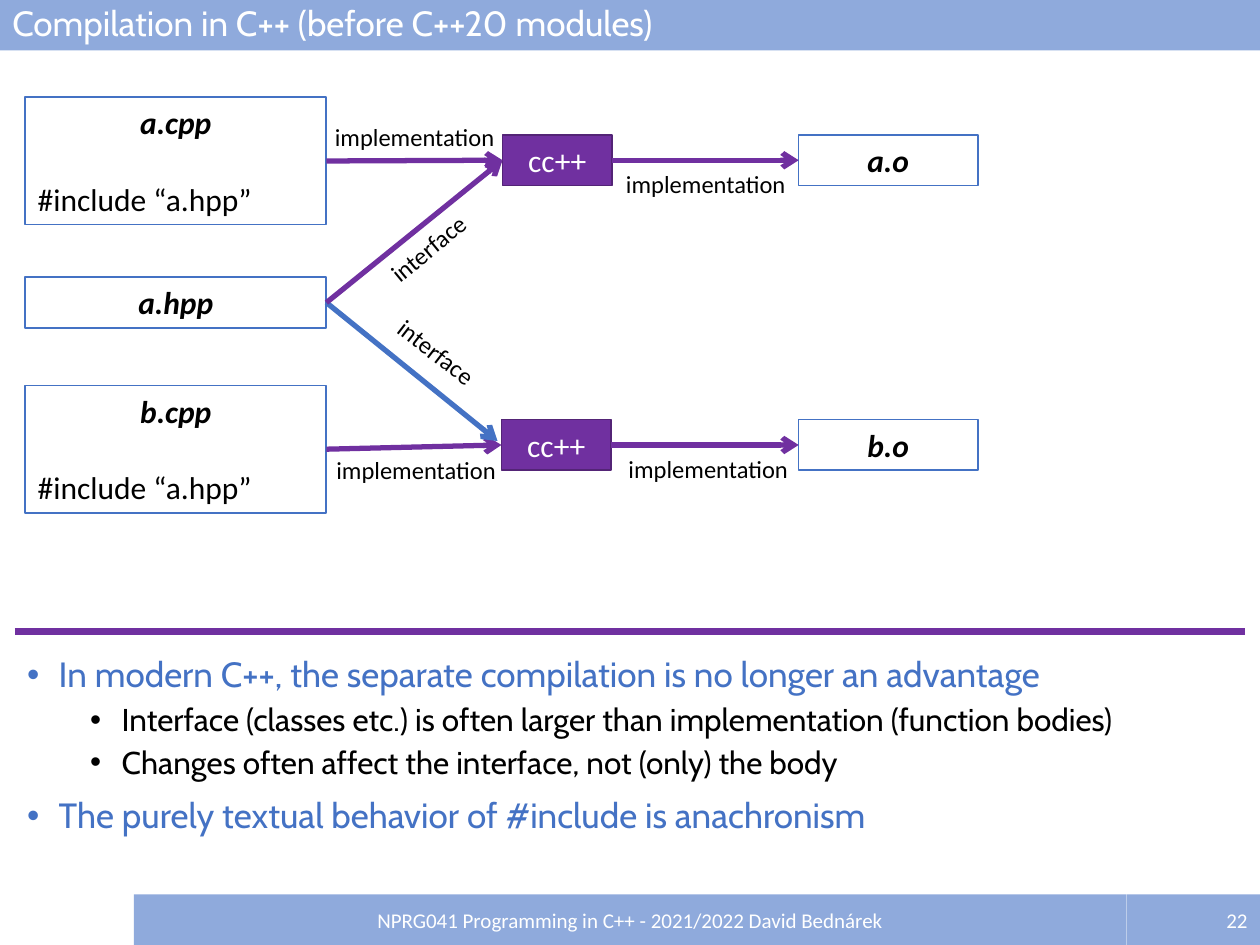
from pptx import Presentation, util as u
from pptx.dml.color import RGBColor
from pptx.enum import shapes, text
from pptx.oxml.ns import qn
from lxml import etree

Cm, Pt = u.Cm, u.Pt
LEFT, CENTER, RIGHT = text.PP_ALIGN.LEFT, text.PP_ALIGN.CENTER, text.PP_ALIGN.RIGHT
TOP, MIDDLE = text.MSO_ANCHOR.TOP, text.MSO_ANCHOR.MIDDLE


class Theme:
    bar, blue, purple, edge = "8FAADC", "4472C4", "7030A0", "532476"
    white, black = "FFFFFF", "000000"
    head, body = "Cabin", "Calibri"
    big, mid, label, small = 20, 18, 14, 12


# Content
TITLE = "Compilation in C++ (before C++20 modules)"
FOOTER = "NPRG041 Programming in C++ - 2021/2022 David Bednárek"
PAGE = "22"
INCLUDE = "#include “a.hpp”"
BULLETS = [
    (0, "In modern C++, the separate compilation is no longer an advantage"),
    (1, "Interface (classes etc.) is often larger than implementation (function bodies)"),
    (1, "Changes often affect the interface, not (only) the body"),
    (0, "The purely textual behavior of #include is anachronism"),
]
# Each pipeline: name, source top, compiler left, compiler and object top
PIPELINES = [("a", 1.96, 10.13, 2.72), ("b", 7.77, 10.11, 8.46)]
# Each label: text, left, top, rotation
LABELS = [
    ("interface", 7.49, 4.57, 320.5),
    ("implementation", 6.5, 2.34, 0),
    ("interface", 7.65, 6.68, 37.8),
    ("implementation", 6.53, 9.04, 0),
    ("implementation", 12.42, 9.02, 0),
    ("implementation", 12.37, 3.28, 0),
]
LABEL_W = {"interface": 2.31, "implementation": 3.76}

# Shared measures in centimetres
W, H, ROW = 25.4, 19.05, 1.02
SRC_X, SRC_W, SRC_H = 0.51, 6.07, 2.57
CC_W, OBJ_X, OBJ_W = 2.21, 16.1, 3.61
FOOT_X, PAGE_X = 2.7, 22.71

prs = Presentation()
prs.slide_width, prs.slide_height = Cm(W), Cm(H)
s = prs.slides.add_slide(prs.slide_layouts[6])


def rgb(value):
    return RGBColor.from_string(value)


def write(tf, content, size=Theme.mid, color=Theme.black, font=Theme.body,
          bold=False, align=LEFT, before=0, spacing=None, level=0, new=False):
    p = tf.add_paragraph() if new else tf.paragraphs[0]
    p.alignment, p.level, p.space_before = align, level, Pt(before)
    if spacing:
        p.line_spacing = spacing
    r = p.add_run()
    r.text = content
    r.font.name, r.font.size = font, Pt(size)
    r.font.bold = r.font.italic = bold
    r.font.color.rgb = rgb(color)
    return p


def box(x, y, w, h, content, fill=Theme.white, line=None, **fmt):
    sp = s.shapes.add_shape(shapes.MSO_SHAPE.RECTANGLE, Cm(x), Cm(y), Cm(w), Cm(h))
    sp.shadow.inherit = False
    sp.fill.solid()
    sp.fill.fore_color.rgb = rgb(fill)
    if line:
        sp.line.color.rgb, sp.line.width = rgb(line), Pt(1)
    else:
        sp.line.fill.background()
    tf = sp.text_frame
    tf.word_wrap = True
    tf.vertical_anchor = TOP if line else MIDDLE
    write(tf, content, **fmt)
    return sp


def file_box(x, y, w, h, name):
    return box(x, y, w, h, name, line=Theme.blue, bold=True, align=CENTER)


def connect(start, end, color=Theme.purple, width=3, arrow=True):
    """Ends are (x, y) points in cm, or shapes joined right side to left side."""
    points = [e if isinstance(e, tuple) else (0, 0) for e in (start, end)]
    c = s.shapes.add_connector(shapes.MSO_CONNECTOR.STRAIGHT,
                               *(Cm(v) for point in points for v in point))
    if not isinstance(start, tuple):
        c.begin_connect(start, 3)
    if not isinstance(end, tuple):
        c.end_connect(end, 1)
    c.line.color.rgb, c.line.width = rgb(color), Pt(width)
    if arrow:
        etree.SubElement(c.line._get_or_add_ln(), qn("a:tailEnd"), type="arrow")
    etree.SubElement(c._element.spPr, qn("a:effectLst"))


# Divider and bullets
connect((0.3, 12.73), (25.1, 12.73), width=4, arrow=False)
tf = s.shapes.add_textbox(Cm(0.3), Cm(13.13), Cm(24.8), Cm(4.8)).text_frame
tf.word_wrap = True
for i, (level, content) in enumerate(BULLETS):
    p = write(tf, content, font=Theme.head, level=level, spacing=0.9, new=i > 0,
              size=Theme.mid if level else Theme.big,
              color=Theme.black if level else Theme.blue,
              before=5 if level else 10)
    pPr = p._p.get_or_add_pPr()
    pPr.set("marL", str(u.Inches(0.25 + 0.5 * level)))
    pPr.set("indent", str(u.Inches(-0.25)))
    etree.SubElement(pPr, qn("a:buFont"), typeface="Arial")
    etree.SubElement(pPr, qn("a:buChar"), char="•")

# Title and footer bars
box(0, 0, W, ROW, TITLE, fill=Theme.bar, size=Theme.big, color=Theme.white,
    font=Theme.head, spacing=0.9)
for x, right, content, align in [(PAGE_X, W, PAGE, RIGHT),
                                 (FOOT_X, PAGE_X, FOOTER, CENTER)]:
    box(x, H - ROW, right - x, ROW, content, fill=Theme.bar, size=Theme.small,
        color=Theme.white, align=align)

# Pipelines: source, compiler, object file
compilers = []
for name, src_y, cc_x, y in PIPELINES:
    source = file_box(SRC_X, src_y, SRC_W, SRC_H, name + ".cpp")
    write(source.text_frame, INCLUDE, before=22, new=True)
    cc = box(cc_x, y, CC_W, ROW, "cc++", fill=Theme.purple, line=Theme.edge,
             color=Theme.white, align=CENTER)
    obj = file_box(OBJ_X, y, OBJ_W, ROW, name + ".o")
    connect(source, cc)
    connect(cc, obj)
    compilers.append(cc)

# Shared header and its interface arrows
header = file_box(SRC_X, 5.59, SRC_W, ROW, "a.hpp")
connect(header, (10.03, 8.89), color=Theme.blue)
connect(header, compilers[0])

# Arrow labels
for content, x, y, angle in LABELS:
    sp = s.shapes.add_textbox(Cm(x), Cm(y), Cm(LABEL_W[content]), Cm(0.86))
    sp.rotation = angle
    sp.text_frame.word_wrap = False
    write(sp.text_frame, content, size=Theme.label)

prs.save("out.pptx")
